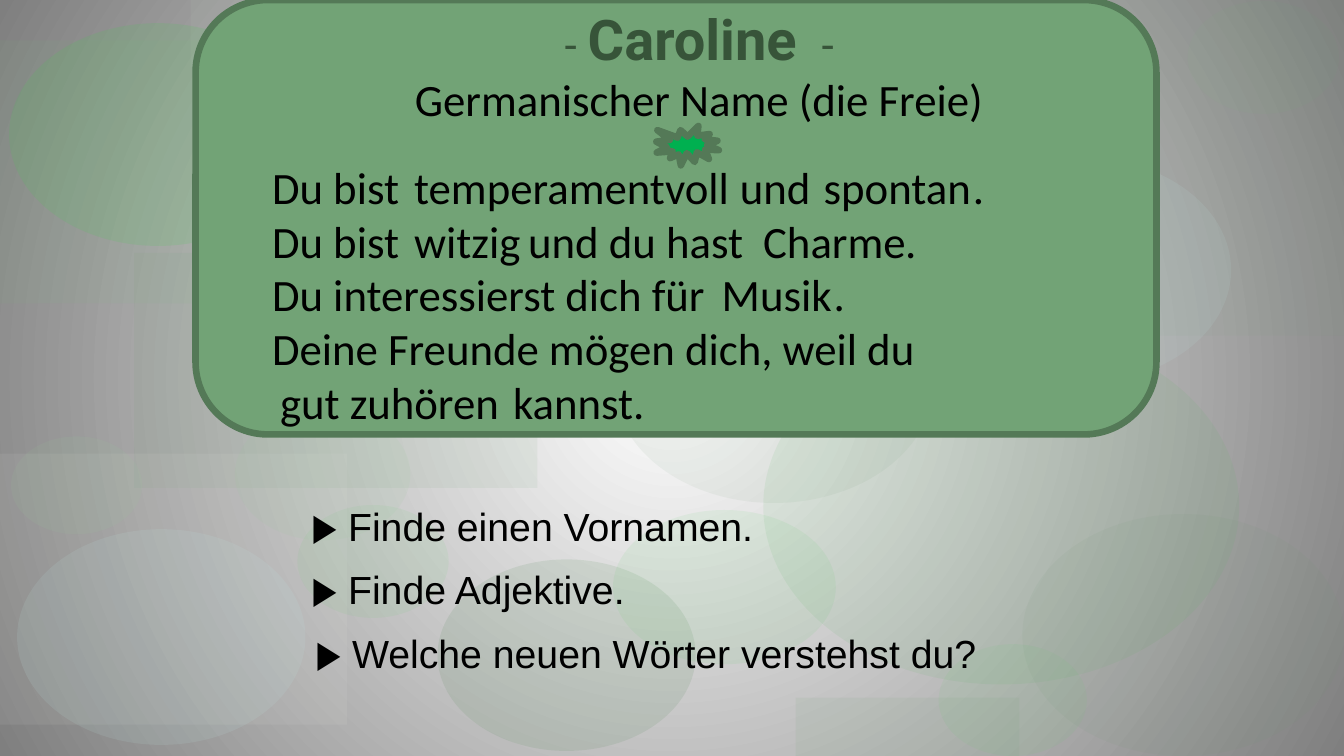
"""Build the name-portrait slide for Caroline with its three tasks."""
from dataclasses import dataclass
from typing import NamedTuple

from lxml.etree import SubElement
from pptx import Presentation
from pptx.dml.color import RGBColor
from pptx.enum.shapes import MSO_SHAPE as Shape
from pptx.enum.text import PP_ALIGN as Align
from pptx.oxml.ns import qn
from pptx.util import Pt

EMU_PER_PX = 9144


@dataclass(frozen=True)
class Theme:
    glow: str = "FFFFFF"
    edge: str = "7F7F7F"
    card: str = "72A376"
    outline: str = "547957"
    burst: str = "00B050"
    title: str = "375439"
    ink: str = "000000"
    body_font: str = "Calibri"
    title_font: str = "Roboto"
    task_font: str = "Arial"
    title_size: int = 40
    body_size: int = 32
    task_size: int = 28
    star_gap: int = 24
    border: float = 4.72


class Frame(NamedTuple):
    left: int
    top: int
    width: int
    height: int


class Decor(NamedTuple):
    kind: Shape
    frame: Frame
    color: str
    opacity: int


class Verse(NamedTuple):
    pieces: tuple[str, ...]
    stops: tuple[int, ...] = ()


class Word(NamedTuple):
    text: str
    frame: Frame


THEME = Theme()
BLOCK, OVAL = Shape.RECTANGLE, Shape.OVAL
DECORS = [
    Decor(BLOCK, Frame(133, 251, 400, 233), "72A376", 9),
    Decor(OVAL, Frame(434, 555, 256, 190), "548958", 13),
    Decor(BLOCK, Frame(767, 0, 566, 333), "72A376", 6),
    Decor(BLOCK, Frame(0, 450, 344, 269), "F3F3EC", 8),
    Decor(OVAL, Frame(609, 261, 317, 238), "709873", 8),
    Decor(OVAL, Frame(931, 639, 147, 111), "68D070", 9),
    Decor(OVAL, Frame(922, 156, 299, 224), "C1E8E4", 11),
    Decor(OVAL, Frame(17, 525, 286, 214), "C1E8E4", 12),
    Decor(OVAL, Frame(295, 501, 150, 112), "68D070", 9),
    Decor(OVAL, Frame(608, 506, 221, 153), "47CE52", 8),
    Decor(BLOCK, Frame(0, 40, 366, 261), "77C27C", 7),
    Decor(BLOCK, Frame(189, 0, 222, 67), "BCCEBD", 10),
    Decor(OVAL, Frame(9, 23, 295, 221), "47CE52", 15),
    Decor(OVAL, Frame(11, 433, 130, 97), "98CD9C", 10),
    Decor(OVAL, Frame(757, 325, 472, 354), "5EB766", 10),
    Decor(OVAL, Frame(811, 1, 150, 112), "68D070", 4),
    Decor(OVAL, Frame(1014, 510, 319, 240), "709873", 8),
    Decor(OVAL, Frame(233, 405, 174, 131), "98CD9C", 10),
    Decor(OVAL, Frame(1178, 1, 150, 112), "68D070", 4),
    Decor(BLOCK, Frame(789, 692, 222, 58), "72A376", 10),
    Decor(OVAL, Frame(439, 1, 150, 112), "68D070", 4),
]
VERSES = [
    Verse(("Du bist", "und", "."), (464, 695)),
    Verse(("Du bist", "und du hast", "."), (254, 628)),
    Verse(("Du interessierst dich für", "."), (557,)),
    Verse(("Deine Freunde mögen dich, weil du",)),
    Verse(("", "kannst."), (239,)),
]
WORDS = [
    Word("gut zuhören", Frame(268, 367, 250, 64)),
    Word("temperamentvoll", Frame(401, 154, 367, 64)),
    Word("spontan", Frame(807, 154, 172, 64)),
    Word("witzig", Frame(401, 207, 141, 64)),
    Word("Charme", Frame(747, 207, 172, 64)),
    Word("Musik", Frame(706, 260, 141, 64)),
]
TASKS = [
    Word("▶ Finde einen Vornamen.", Frame(299, 493, 758, 57)),
    Word("▶ Finde Adjektive.", Frame(299, 556, 758, 57)),
    Word("▶ Welche neuen Wörter verstehst du?", Frame(303, 619, 758, 57)),
]


def px(length: int) -> int:
    """Turn px into EMU."""
    return length * EMU_PER_PX


def paint_background(page) -> None:
    """Fill the page with a round gradient from its centre."""
    fill = page.background.fill
    fill.gradient()
    for stop, color in zip(fill.gradient_stops, (THEME.glow, THEME.edge)):
        stop.color.rgb = RGBColor.from_string(color)
    linear = next(page.background._cSld.iter(qn("a:lin")))
    gradient = linear.getparent()
    gradient.remove(linear)
    circle = SubElement(gradient, qn("a:path"), {"path": "circle"})
    SubElement(circle, qn("a:fillToRect"), dict.fromkeys("ltrb", "50000"))


def add_figure(page, kind: Shape, frame: Frame, color: str, *,
               opacity: int = 100, outlined: bool = False) -> None:
    """Draw a preset shape with a flat fill."""
    figure = page.shapes.add_shape(kind, *map(px, frame))
    figure.shadow.inherit = False
    figure.fill.solid()
    figure.fill.fore_color.rgb = RGBColor.from_string(color)
    if opacity < 100:
        tint = next(figure._element.spPr.iter(qn("a:srgbClr")))
        SubElement(tint, qn("a:alpha"), val=str(opacity * 1000))
    if outlined:
        figure.line.color.rgb = RGBColor.from_string(THEME.outline)
        figure.line.width = Pt(THEME.border)
    else:
        figure.line.fill.background()


def add_box(page, frame: Frame):
    """Add a wrapping text box and return its text frame."""
    box = page.shapes.add_textbox(*map(px, frame)).text_frame
    box.word_wrap = True
    return box


def add_span(para, text: str, *, font: str = THEME.body_font, size: int = THEME.body_size,
             color: str = THEME.ink, bold: bool = False) -> None:
    """Append formatted text to a paragraph."""
    span = para.add_run()
    span.text = text
    span.font.name, span.font.size, span.font.bold = font, Pt(size), bold
    span.font.color.rgb = RGBColor.from_string(color)


def set_tabs(para, stops: tuple[int, ...]) -> None:
    """Give a paragraph left tab stops."""
    tabs = SubElement(para._p.get_or_add_pPr(), qn("a:tabLst"))
    for stop in stops:
        SubElement(tabs, qn("a:tab"), pos=str(px(stop)), algn="l")


def add_portrait(page) -> None:
    """Write the title, the meaning and the verses with gaps for the words."""
    box = add_box(page, Frame(260, 0, 867, 434))
    heading, meaning = box.paragraphs[0], box.add_paragraph()
    heading.alignment = meaning.alignment = Align.CENTER
    add_span(heading, "- ", color=THEME.title)
    add_span(heading, "Caroline ", font=THEME.title_font, size=THEME.title_size,
             color=THEME.title, bold=True)
    add_span(heading, " -", color=THEME.title)
    add_span(meaning, "Germanischer Name (die Freie)")
    for index, verse in enumerate(VERSES):
        para = box.add_paragraph()
        if index == 0:
            para.space_before = Pt(THEME.star_gap)
        if verse.stops:
            set_tabs(para, verse.stops)
        add_span(para, "\t".join(verse.pieces))


def main() -> None:
    """Build and save the deck."""
    deck = Presentation()
    deck.slide_width, deck.slide_height = px(1333), px(750)
    page = deck.slides.add_slide(deck.slide_layouts[6])
    paint_background(page)
    for decor in DECORS:
        add_figure(page, decor.kind, decor.frame, decor.color, opacity=decor.opacity)
    add_figure(page, Shape.ROUNDED_RECTANGLE, Frame(194, 0, 953, 431), THEME.card, outlined=True)
    add_portrait(page)
    add_figure(page, Shape.EXPLOSION1, Frame(651, 125, 62, 39), THEME.burst, outlined=True)
    for word in WORDS:
        add_span(add_box(page, word.frame).paragraphs[0], word.text)
    for task in TASKS:
        add_span(add_box(page, task.frame).paragraphs[0], task.text,
                 font=THEME.task_font, size=THEME.task_size)
    deck.save("out.pptx")


if __name__ == "__main__":
    main()
